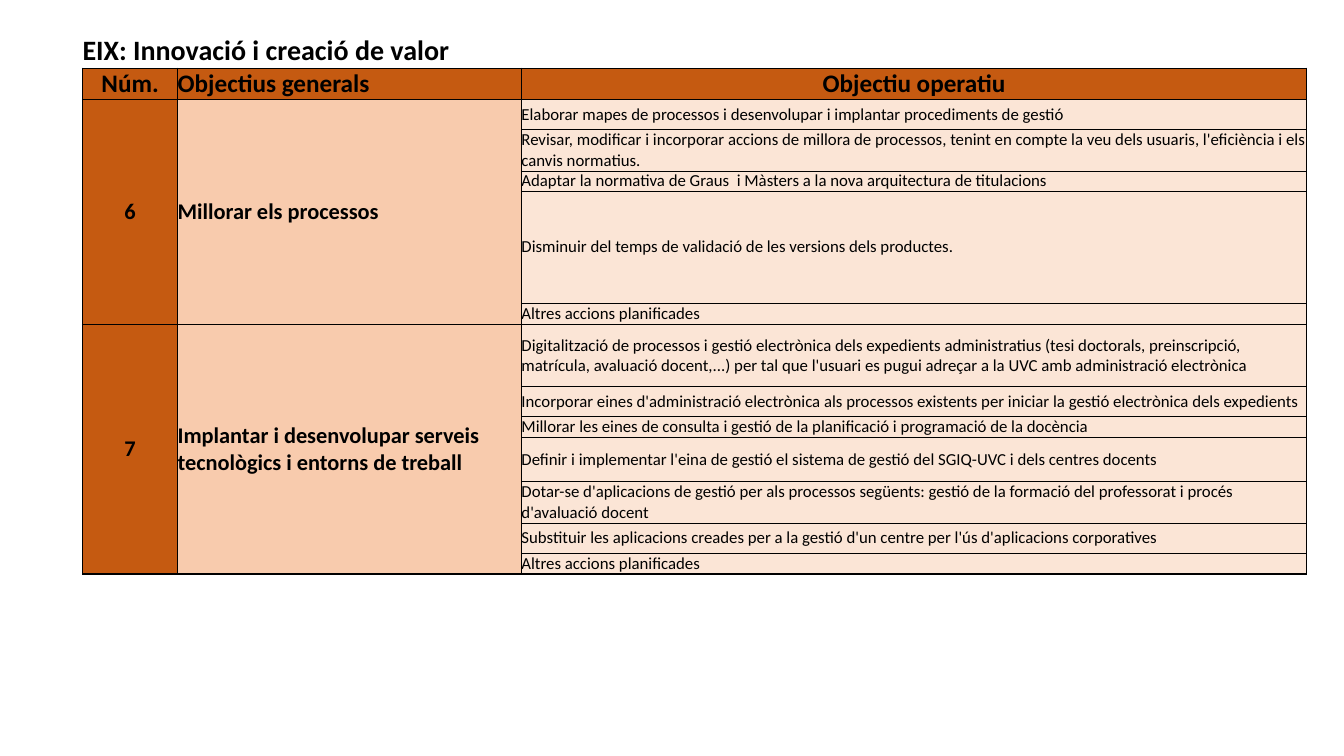
from lxml.etree import SubElement
from pptx import Presentation
from pptx.dml.color import RGBColor
from pptx.enum.text import MSO_ANCHOR as Anchor, PP_ALIGN as Align
from pptx.oxml.ns import qn
from pptx.util import Pt

TITLE = "EIX: Innovació i creació de valor"
HEADERS = [
    ("Núm.", Align.CENTER),
    ("Objectius generals", Align.LEFT),
    ("Objectiu operatiu", Align.CENTER),
]
GOALS = [
    ("6", "Millorar els processos", [
        ("Elaborar mapes de processos i desenvolupar i implantar procediments de gestió", 21.8),
        ("Revisar, modificar i incorporar accions de millora de processos, tenint en compte "
         "la veu dels usuaris, l'eficiència i els canvis normatius.", 29.5),
        ("Adaptar la normativa de Graus  i Màsters a la nova arquitectura de titulacions", 14.8),
        ("Disminuir del temps de validació de les versions dels productes.", 79.5),
        ("Altres accions planificades", 15.5),
    ]),
    ("7", "Implantar i desenvolupar serveis tecnològics i entorns de treball", [
        ("Digitalització de processos i gestió electrònica dels expedients administratius "
         "(tesi doctorals, preinscripció, matrícula, avaluació docent,...) per tal que "
         "l'usuari es pugui adreçar a la UVC amb administració electrònica", 44.4),
        ("Incorporar eines d'administració electrònica als processos existents per iniciar "
         "la gestió electrònica dels expedients", 21.5),
        ("Millorar les eines de consulta i gestió de la planificació i programació de la docència", 14.8),
        ("Definir i implementar l'eina de gestió el sistema de gestió del SGIQ-UVC i dels "
         "centres docents", 31.6),
        ("Dotar-se d'aplicacions de gestió per als processos següents: gestió de la formació "
         "del professorat i procés d'avaluació docent", 29.5),
        ("Substituir les aplicacions creades per a la gestió d'un centre per l'ús "
         "d'aplicacions corporatives", 21.7),
        ("Altres accions planificades", 14.7),
    ]),
]
ORANGE, PEACH, CREAM, BLACK = "C55A11", "F8CBAD", "FBE5D6", "000000"
LEFT, TOP = 59, 24.3
COLUMN_WIDTHS = [67.9, 245.6, 560.9]
TITLE_HEIGHT, HEADER_HEIGHT = 24.4, 22
THIN, THICK = 0.5, 1


def color(value):
    return RGBColor.from_string(value)


def write(cell, text, size=12, bold=True, align=Align.LEFT, fill=None, anchor=Anchor.MIDDLE):
    cell.margin_left = cell.margin_right = cell.margin_top = cell.margin_bottom = 0
    cell.vertical_anchor = anchor
    if fill:
        cell.fill.solid()
        cell.fill.fore_color.rgb = color(fill)
    else:
        cell.fill.background()
    paragraph = cell.text_frame.paragraphs[0]
    paragraph.alignment = align
    run = paragraph.add_run()
    run.text = text
    font = run.font
    font.name, font.size, font.bold = "Calibri", Pt(size), bold
    font.color.rgb = color(BLACK)


def set_borders(cell, **widths):
    properties = cell._tc.get_or_add_tcPr()
    sides = [side for side in ("L", "R", "T", "B") if side in widths]
    for position, side in enumerate(sides):
        line = SubElement(properties, qn(f"a:ln{side}"), w=str(Pt(widths[side])))
        fill = SubElement(line, qn("a:solidFill"))
        SubElement(fill, qn("a:srgbClr"), val=BLACK)
        properties.insert(position, line)


def build_table(slide):
    actions = [action for _, _, group in GOALS for action in group]
    heights = [TITLE_HEIGHT, HEADER_HEIGHT] + [height for _, height in actions]
    frame = slide.shapes.add_table(
        len(heights), len(COLUMN_WIDTHS), Pt(LEFT), Pt(TOP),
        Pt(sum(COLUMN_WIDTHS)), Pt(sum(heights)))
    table = frame.table
    table.first_row = table.horz_banding = False
    for column, width in zip(table.columns, COLUMN_WIDTHS):
        column.width = Pt(width)
    for row, height in zip(table.rows, heights):
        row.height = Pt(height)

    table.cell(0, 0).merge(table.cell(0, 2))
    write(table.cell(0, 0), TITLE, size=20, anchor=Anchor.BOTTOM)
    for column in range(3):
        set_borders(table.cell(0, column), B=THICK)

    for column, (text, align) in enumerate(HEADERS):
        write(table.cell(1, column), text, size=18, align=align, fill=ORANGE)

    first = 2
    groups = [(1, 1)]
    for number, goal, group in GOALS:
        last = first + len(group) - 1
        groups.append((first, last))
        for column in (0, 1):
            table.cell(first, column).merge(table.cell(last, column))
        write(table.cell(first, 0), number, size=16, align=Align.CENTER, fill=ORANGE)
        write(table.cell(first, 1), goal, size=16, fill=PEACH)
        for row, (text, _) in enumerate(group, first):
            write(table.cell(row, 2), text, bold=False, fill=CREAM)
        first = last + 1

    for first, last in groups:
        for row in range(first, last + 1):
            for column in range(3):
                merged = column < 2
                set_borders(
                    table.cell(row, column),
                    L=THIN if column else THICK, R=THIN,
                    T=THICK if merged or row == first else THIN,
                    B=THICK if merged or row == last else THIN)


def main():
    presentation = Presentation()
    presentation.slide_width, presentation.slide_height = Pt(960), Pt(540)
    slide = presentation.slides.add_slide(presentation.slide_layouts[6])
    build_table(slide)
    presentation.save("out.pptx")


if __name__ == "__main__":
    main()
